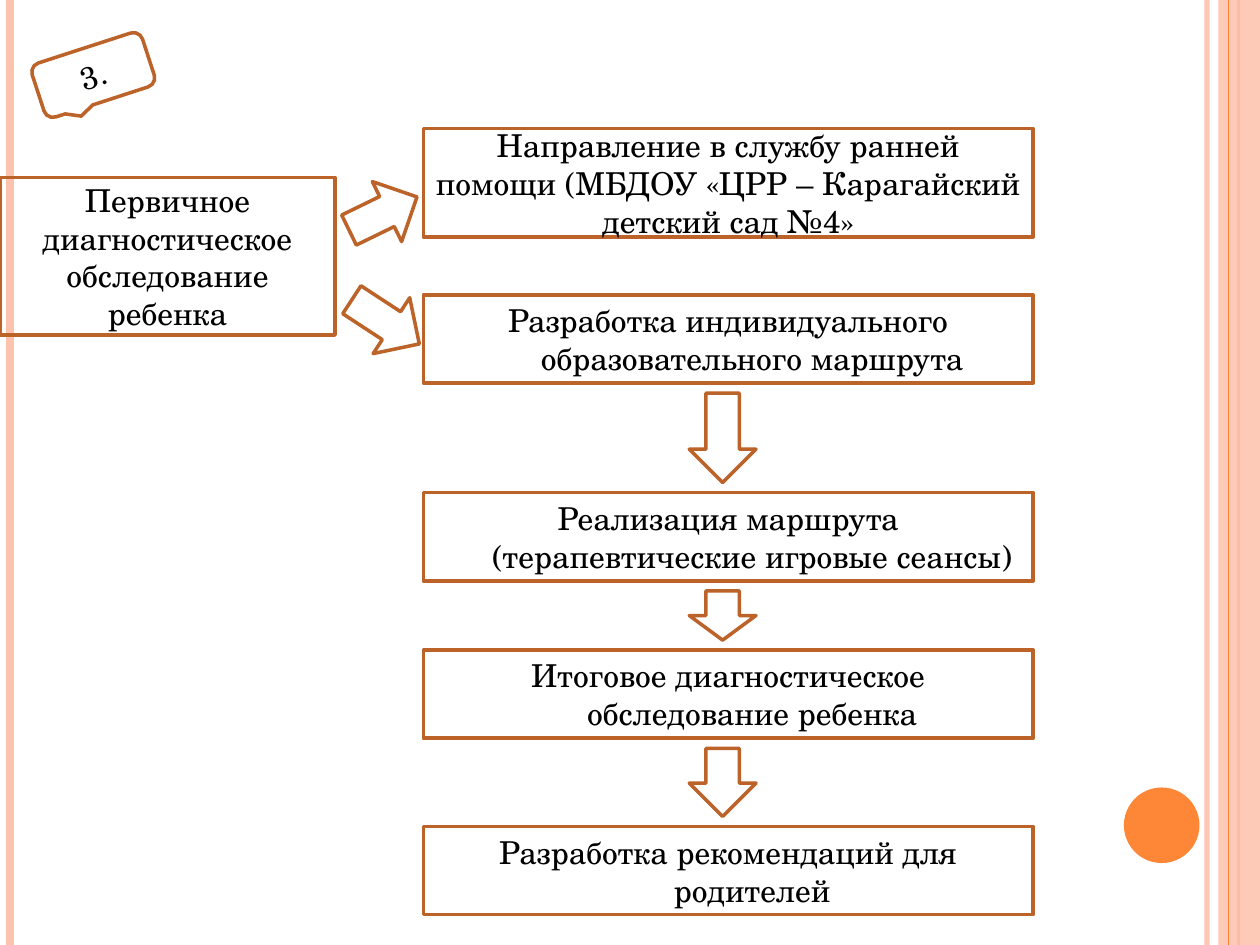
from dataclasses import dataclass
from typing import Any, Optional

import pptx
import pptx.dml.color
import pptx.enum.shapes
import pptx.enum.text
import pptx.oxml.ns
import pptx.util
from lxml import etree

Inches = pptx.util.Inches
Kind = pptx.enum.shapes.MSO_SHAPE


@dataclass(frozen=True)
class Theme:
    pale: str = "FEC3AE"
    orange: str = "FE8637"
    brown: str = "BC6329"
    ink: str = "000000"
    font: str = "TeX Gyre Schola"
    size: float = 18
    edge: float = 2


@dataclass(frozen=True)
class Rule:
    x: float
    color: str
    width: float
    alpha: int = 100


@dataclass(frozen=True)
class Box:
    left: float
    top: float
    width: float
    height: float
    text: str = ""
    kind: Any = Kind.RECTANGLE
    turn: float = 0
    hang: float = 0


THEME = Theme()

# Flow column: boxes share one left edge, width and height
LEFT, WIDE, HIGH = 3.36, 4.84, 0.7
STEPS = [
    (2.34, "Разработка индивидуального образовательного маршрута"),
    (3.91, "Реализация маршрута (терапевтические игровые сеансы)"),
    (5.16, "Итоговое диагностическое обследование ребенка"),
    (6.56, "Разработка рекомендаций для родителей"),
]
GAP, THICK, AXIS = 0.08, 0.53, 5.735


def rgb(color: str) -> pptx.dml.color.RGBColor:
    return pptx.dml.color.RGBColor.from_string(color)


def assign(item: Any, values: dict) -> None:
    for name, value in values.items():
        setattr(item, name, value)


def fade(part: Any, alpha: int) -> None:
    if alpha < 100:
        tint = part.find(".//" + pptx.oxml.ns.qn("a:srgbClr"))
        node = etree.SubElement(tint, pptx.oxml.ns.qn("a:alpha"))
        node.set("val", str(alpha * 1000))


def add_rule(slide: Any, rule: Rule) -> None:
    line = slide.shapes.add_connector(
        pptx.enum.shapes.MSO_CONNECTOR.STRAIGHT,
        Inches(rule.x), Inches(0), Inches(rule.x), Inches(7.5))
    line.line.color.rgb = rgb(rule.color)
    line.line.width = pptx.util.Pt(rule.width)
    props = line._element.spPr
    fade(props, rule.alpha)
    etree.SubElement(props, pptx.oxml.ns.qn("a:effectLst"))


def add_shape(slide: Any, box: Box) -> Any:
    shape = slide.shapes.add_shape(
        box.kind, Inches(box.left), Inches(box.top),
        Inches(box.width), Inches(box.height))
    shape.shadow.inherit = False
    shape.rotation = box.turn
    return shape


def add_solid(slide: Any, box: Box, color: str, alpha: int = 100) -> None:
    shape = add_shape(slide, box)
    shape.fill.solid()
    shape.fill.fore_color.rgb = rgb(color)
    shape.line.fill.background()
    fade(shape._element.spPr, alpha)


def add_frame(slide: Any, box: Box) -> None:
    shape = add_shape(slide, box)
    shape.fill.background()
    shape.line.color.rgb = rgb(THEME.brown)
    shape.line.width = pptx.util.Pt(THEME.edge)
    if box.text:
        write(shape.text_frame, box.text, box.hang)


def write(frame: Any, text: str, hang: Optional[float]) -> None:
    assign(frame, {
        "word_wrap": True,
        "vertical_anchor": pptx.enum.text.MSO_ANCHOR.MIDDLE,
    })
    para = frame.paragraphs[0]
    para.alignment = pptx.enum.text.PP_ALIGN.CENTER
    if hang:
        para._p.get_or_add_pPr().set("marL", str(Inches(hang)))
        para._p.get_or_add_pPr().set("indent", str(Inches(-hang)))
    run = para.add_run()
    run.text = text
    assign(run.font, {"name": THEME.font, "size": pptx.util.Pt(THEME.size)})
    run.font.color.rgb = rgb(THEME.ink)


def main() -> None:
    deck = pptx.Presentation()
    assign(deck, {"slide_width": Inches(10), "slide_height": Inches(7.5)})
    slide = deck.slides.add_slide(deck.slide_layouts[6])

    # Side stripes and disc
    for rule in (Rule(9.58, THEME.pale, 3, 93), Rule(0.08, THEME.pale, 4.5),
                 Rule(9.83, THEME.orange, 1.5)):
        add_rule(slide, rule)
    add_solid(slide, Box(9.67, 0, 0.33, 7.5), THEME.pale, 87)
    add_rule(slide, Rule(9.75, THEME.orange, 0.75))
    add_solid(slide, Box(8.92, 6.25, 0.6, 0.6, kind=Kind.OVAL), THEME.orange)

    # Number, first exam and referral
    frames = [
        Box(0.28, 0.37, 0.92, 0.45, "3.",
            Kind.ROUNDED_RECTANGULAR_CALLOUT, 342),
        Box(0, 1.41, 2.66, 1.25,
            "Первичное диагностическое обследование ребенка"),
        Box(LEFT, 1.02, WIDE, 0.86,
            "Направление в службу ранней помощи "
            "(МБДОУ «ЦРР – Карагайский детский сад №4»"),
    ]
    # Steps of the route
    frames += [Box(LEFT, top, WIDE, HIGH, text, hang=0.38)
               for top, text in STEPS]

    # Branching arrows
    arrow = Kind.RIGHT_ARROW
    frames += [Box(2.74, 1.43, 0.6, THICK, kind=arrow, turn=334),
               Box(2.74, 2.29, 0.64, THICK, kind=arrow, turn=33.2)]
    # Down arrows, centred in the gaps between steps
    for (top, _), (below, _) in zip(STEPS, STEPS[1:]):
        length = below - top - HIGH - 2 * GAP
        middle = (top + HIGH + below) / 2
        frames.append(Box(AXIS - length / 2, middle - THICK / 2,
                          length, THICK, kind=arrow, turn=90))

    for frame in frames:
        add_frame(slide, frame)
    deck.save("out.pptx")


if __name__ == "__main__":
    main()
